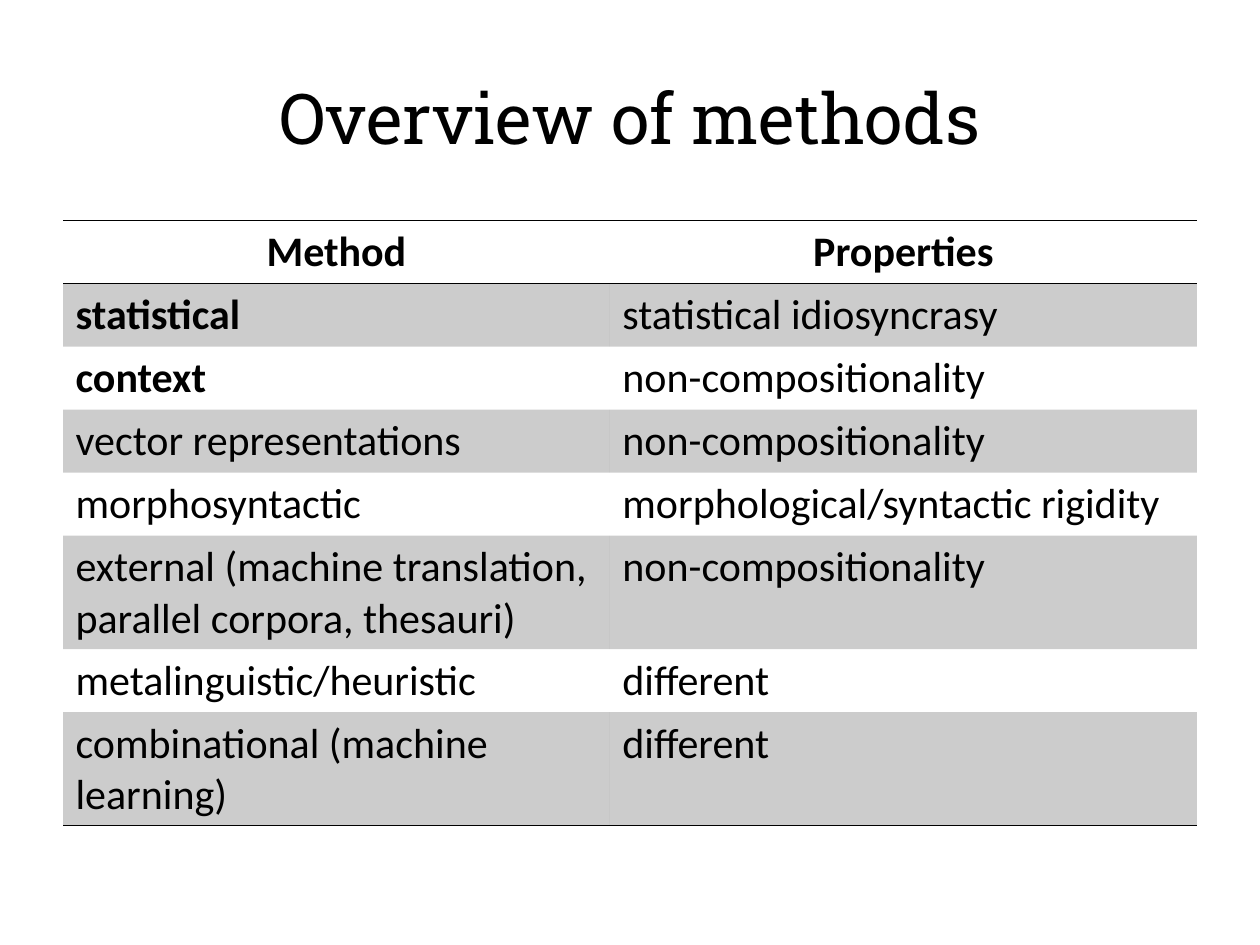
from dataclasses import dataclass

from lxml import etree
from pptx import Presentation
from pptx.dml.color import RGBColor
from pptx.enum import text as t
from pptx.oxml import ns
from pptx.util import Pt


@dataclass(frozen=True)
class Theme:
    ink: str = "000000"
    head: str = "Roboto Slab"
    body: str = "Calibri"
    big: int = 40
    small: int = 24
    tint: int = 20  # opacity of shaded rows, percent
    rule: int = 1


THEME = Theme()
PLAIN = "{2D5ABB26-0587-4C30-8999-92F81FD0307C}"  # no style, no grid

# Method, properties, and whether the method is bold
ROWS = [
    ("statistical", "statistical idiosyncrasy", True),
    ("context", "non-compositionality", True),
    ("vector representations", "non-compositionality", False),
    ("morphosyntactic", "morphological/syntactic rigidity", False),
    ("external (machine translation, parallel corpora, thesauri)",
     "non-compositionality", False),
    ("metalinguistic/heuristic", "different", False),
    ("combinational (machine learning)", "different", False),
]


def write(frame, words, font, size, bold=False, center=False):
    par = frame.paragraphs[0]
    par.alignment = t.PP_ALIGN.CENTER if center else t.PP_ALIGN.LEFT
    run = par.add_run()
    run.text = words
    run.font.name = font
    run.font.size = Pt(size)
    run.font.bold = bold
    run.font.color.rgb = RGBColor.from_string(THEME.ink)


def node(parent, tag, **attrs):
    item = etree.SubElement(parent, ns.qn(tag))
    for key, value in attrs.items():
        item.set(key, str(value))
    return item


def border(props, sides):
    """Rule the named sides of a cell and clear the others."""
    for side in "LRTB":
        if side in sides:
            line = node(props, f"a:ln{side}", w=Pt(THEME.rule))
            fill = node(line, "a:solidFill")
            node(fill, "a:srgbClr", val=THEME.ink)
        else:
            line = node(props, f"a:ln{side}", w=0)
            node(line, "a:noFill")


def shade(props, on):
    if on:
        fill = node(props, "a:solidFill")
        color = node(fill, "a:srgbClr", val=THEME.ink)
        node(color, "a:alpha", val=THEME.tint * 1000)
    else:
        node(props, "a:noFill")


def title(slide, left, top, width, height):
    box = slide.shapes.add_textbox(Pt(left), Pt(top), Pt(width), Pt(height))
    frame = box.text_frame
    frame.word_wrap = True
    frame.vertical_anchor = t.MSO_ANCHOR.MIDDLE
    write(frame, "Overview of methods", THEME.head, THEME.big, center=True)


def methods(slide, left, top, width, height):
    data = [("Method", "Properties", True)] + ROWS
    shape = slide.shapes.add_table(
        len(data), 2, Pt(left), Pt(top), Pt(width), Pt(height))
    grid = shape.table
    grid.first_row = grid.horz_banding = False
    grid._tbl.tblPr.find(ns.qn("a:tableStyleId")).text = PLAIN

    first = 312.5
    for col, size in zip(grid.columns, (first, width - first)):
        col.width = Pt(size)
    for row in grid.rows:
        row.height = Pt(29.5)

    for r, (method, trait, bold) in enumerate(data):
        top_row = r == 0
        sides = "TB" if top_row else "B" if r == len(data) - 1 else ""
        # The rule under the heading is shared with the row below
        if r == 1:
            sides += "T"
        for c, words in enumerate((method, trait)):
            cell = grid.cell(r, c)
            write(cell.text_frame, words, THEME.body, THEME.small,
                  bold=top_row or (bold and c == 0), center=top_row)
            props = cell._tc.get_or_add_tcPr()
            border(props, sides)
            shade(props, r % 2 == 1)
    shape.height = Pt(height)


def main():
    deck = Presentation()
    deck.slide_width, deck.slide_height = Pt(720), Pt(540)
    slide = deck.slides.add_slide(deck.slide_layouts[6])
    title(slide, 36, 21.6, 648, 90)
    methods(slide, 36, 126, 648, 345.6)
    deck.save("out.pptx")


if __name__ == "__main__":
    main()
